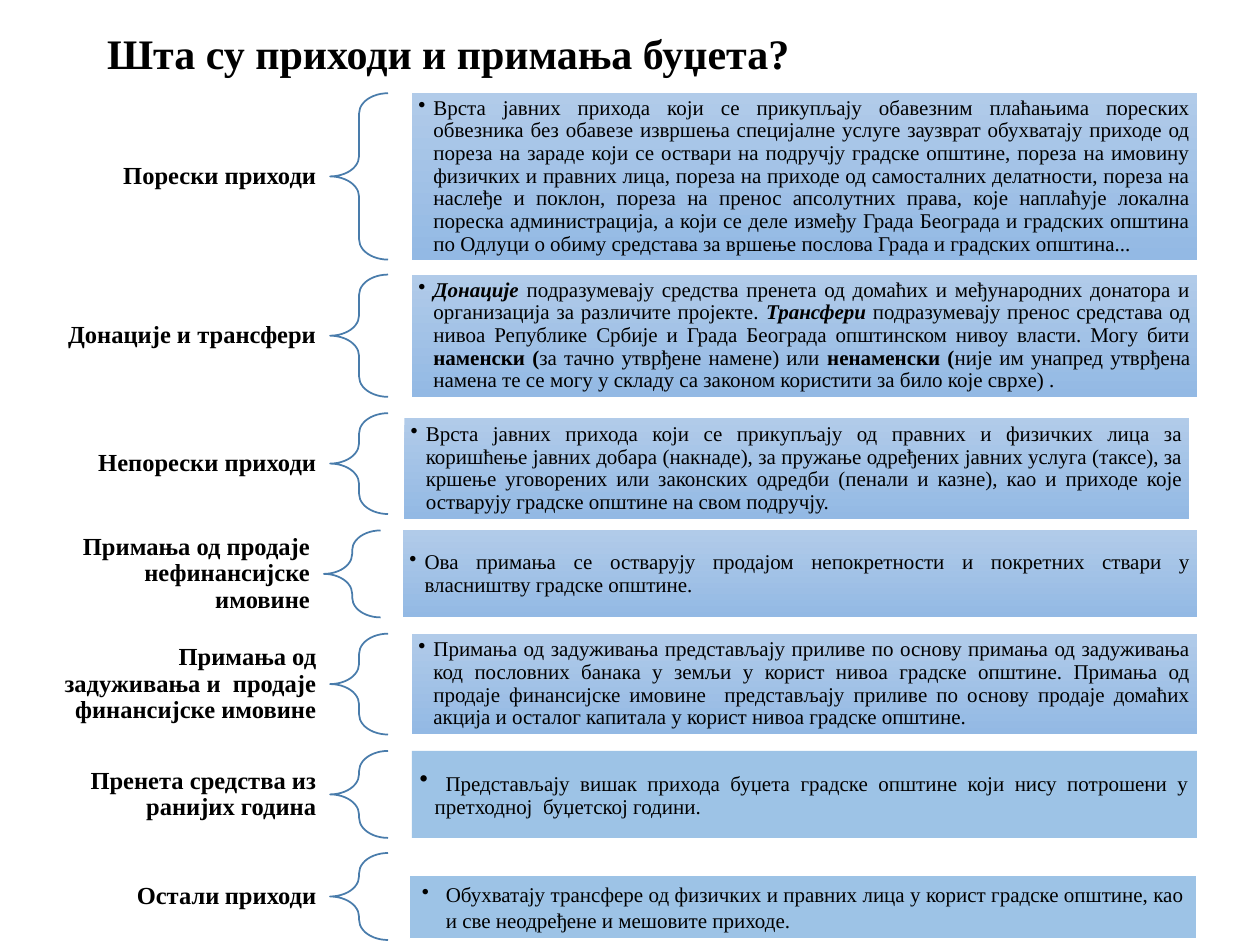
from lxml import etree
from pptx import Presentation
from pptx.dml.color import RGBColor
from pptx.enum.shapes import MSO_SHAPE as SHAPE
from pptx.enum.text import MSO_ANCHOR as ANCHOR, PP_ALIGN as ALIGN
from pptx.oxml.ns import qn
from pptx.util import Inches, Pt

COLORS = {"text": "000000", "brace": "497CAB", "top": "B1CBE9",
          "bottom": "93B9E4", "flat": "9DC3E6", "edge": "FFFFFF"}
FONT = "Times New Roman"
BOLD = {"bold": True}
BOLD_ITALIC = {"bold": True, "italic": True}
LABEL_LEFT, LABEL_H = 0.33, 0.69


def rgb(name):
    return RGBColor.from_string(COLORS[name])


def write(sp, runs, base, align, margins, spacing=0.9, indent=0):
    tf = sp.text_frame
    frame = {"word_wrap": True, "vertical_anchor": ANCHOR.MIDDLE,
             "margin_left": Inches(margins[0]), "margin_right": Inches(margins[0]),
             "margin_top": Inches(margins[1]), "margin_bottom": Inches(margins[1])}
    for key, value in frame.items():
        setattr(tf, key, value)
    p = tf.paragraphs[0]
    p.alignment, p.line_spacing = align, spacing
    if indent:
        pPr = p._p.get_or_add_pPr()
        pPr.set("marL", str(Inches(indent)))
        pPr.set("indent", str(-Inches(indent)))
        etree.SubElement(pPr, qn("a:buChar")).set("char", "•")
    for text, style in runs:
        r = p.add_run()
        r.text = text
        r.font.color.rgb = rgb("text")
        for key, value in {"name": FONT, **base, **style}.items():
            setattr(r.font, key, value)


prs = Presentation()
prs.slide_width, prs.slide_height = Inches(10), Inches(7.5)
s = prs.slides.add_slide(prs.slide_layouts[5])

title = s.shapes.title
place = {"left": 0.75, "top": 0.02, "width": 9, "height": 0.85}
for key, value in place.items():
    setattr(title, key, Inches(value))
write(title, [("Шта су приходи и примања буџета?", {})],
      {"size": Pt(24), "bold": True}, ALIGN.LEFT, (0.1, 0.05))

TIGHT = {"margins": (0.05, 0.05), "indent": 0.12}
LOOSE = {"margins": (0.06, 0.06), "indent": 0.12}
WIDE = {"margins": (0.1, 0.05), "indent": 0.19, "spacing": 1.0}

rows = [
    ([("Порески приходи", {})], (2.62, 0.74, 0.46, 1.32), (3.27, 0.74, 6.23, 1.32), TIGHT,
     [("Врста јавних прихода који се прикупљају обавезним плаћањима пореских обвезника без обавезе "
       "извршења специјалне услуге заузврат обухватају приходе од пореза на зараде који се оствари на "
       "подручју градске општине, пореза на имовину физичких и правних лица, пореза на приходе од "
       "самосталних делатности, пореза на наслеђе и поклон, пореза на пренос апсолутних права, које "
       "наплаћује локална пореска администрација, а који се деле између Града Београда и градских "
       "општина по Одлуци о обиму средстава за вршење послова Града и градских општина...", {})]),
    ([("Донације и трансфери", {})], (2.62, 2.18, 0.46, 0.97), (3.27, 2.18, 6.23, 0.97), TIGHT,
     [("Донације ", BOLD_ITALIC),
      ("подразумевају средства пренета од домаћих и међународних донатора и организација за "
       "различите пројекте. ", {}),
      ("Трансфери", BOLD_ITALIC),
      (" подразумевају пренос средстава од нивоа Републике Србије и Града Београда општинском "
       "нивоу власти. Могу бити ", {}),
      ("наменски (", BOLD),
      ("за тачно утврђене намене) или ", {}),
      ("ненаменски (", BOLD),
      ("није им унапред утврђена намена те се могу у складу са законом користити за било које "
       "сврхе) .", {})]),
    ([("Непорески приходи", {})], (2.62, 3.28, 0.46, 0.8), (3.21, 3.32, 6.23, 0.8), TIGHT,
     [("Врста јавних прихода који се прикупљају од правних и физичких лица за коришћење јавних "
       "добара (накнаде), за пружање одређених јавних услуга (таксе), за кршење уговорених или "
       "законских одредби (пенали и казне), као и приходе које остварују градске општине на свом "
       "подручју.", {})]),
    ([("Примања од продаје нефинансијске имовине", {})],
     (2.57, 4.21, 0.45, 0.69), (3.2, 4.21, 6.3, 0.69), TIGHT,
     [("Ова примања се остварују продајом непокретности и покретних ствари у власништву градске "
       "општине.", {})]),
    ([("Примања од задуживања и  продаје финансијске имовине", {})],
     (2.62, 5.03, 0.46, 0.8), (3.27, 5.03, 6.23, 0.8), TIGHT,
     [("Примања од задуживања представљају приливе по основу примања од задуживања код пословних "
       "банака у земљи у корист нивоа градске општине. Примања од продаје финансијске имовине  "
       "представљају приливе по основу продаје домаћих акција и осталог капитала у корист нивоа "
       "градске општине.", {})]),
    ([("Пренета средства из ранијих година", {})],
     (2.62, 5.96, 0.46, 0.69), (3.27, 5.96, 6.23, 0.69), LOOSE,
     [(" ", {"name": "Calibri", "size": Pt(14)}),
      ("Представљају вишак прихода буџета градске општине који нису потрошени у претходној  "
       "буџетској години.", {})]),
    ([("Остали", {}), (" ", {"size": Pt(12)}), ("приходи", {})],
     (2.62, 6.77, 0.46, 0.69), (3.25, 6.95, 6.25, 0.5), WIDE,
     [("Обухватају трансфере од физичких и правних лица у корист градске општине, као и све "
       "неодређене и мешовите приходе.", {})]),
]

for label, brace_at, panel_at, layout, runs in rows:
    x, y, w, h = brace_at
    label_at = (LABEL_LEFT, y + (h - LABEL_H) / 2, x - LABEL_LEFT, LABEL_H)
    sp = s.shapes.add_textbox(*map(Inches, label_at))
    write(sp, label, {"size": Pt(14), "bold": True}, ALIGN.RIGHT, (0.11, 0.04))

    brace = s.shapes.add_shape(SHAPE.LEFT_BRACE, *map(Inches, brace_at))
    brace.shadow.inherit = False
    brace.adjustments[0], brace.adjustments[1] = 0.35, 0.5
    brace.fill.background()
    brace.line.color.rgb = rgb("brace")
    brace.line.width = Pt(1)

    panel = s.shapes.add_shape(SHAPE.RECTANGLE, *map(Inches, panel_at))
    panel.shadow.inherit = False
    if layout is TIGHT:
        panel.fill.gradient()
        panel.fill.gradient_angle = 270
        for stop, name in zip(panel.fill.gradient_stops, ("top", "bottom")):
            stop.color.rgb = rgb(name)
    else:
        panel.fill.solid()
        panel.fill.fore_color.rgb = rgb("flat")
    if layout is WIDE:
        panel.line.color.rgb = rgb("edge")
        panel.line.width = Pt(0.75)
    else:
        panel.line.fill.background()
    write(panel, runs, {"size": Pt(12)}, ALIGN.JUSTIFY, **layout)

prs.save("out.pptx")
